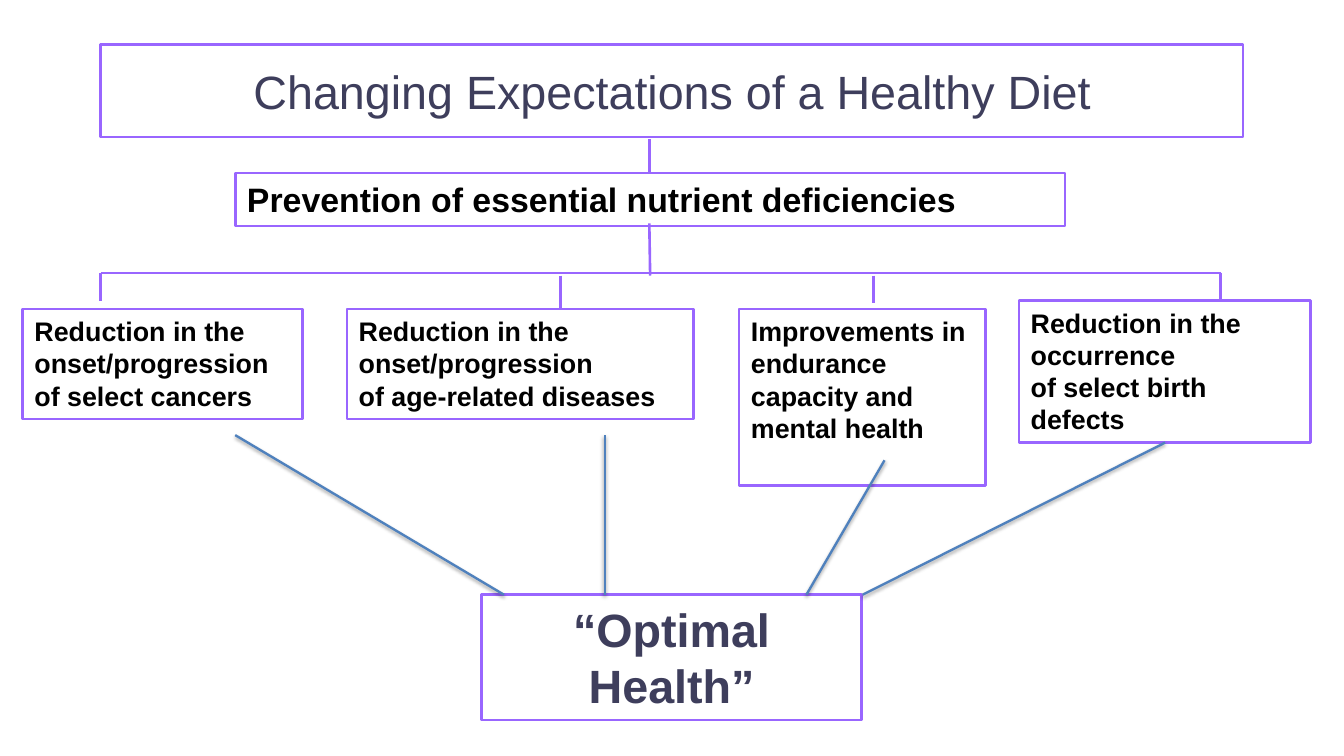
import pptx
import pptx.util
import pptx.dml.color
import pptx.enum.shapes
import pptx.enum.text
import lxml.etree

COLORS = {"frame": "9966FF", "link": "4F81BD", "head": "3E3E5C", "body": "000000"}

# Positions count cells of a 16 x 9 grid: left, top, width, height
HEADS = [
    ("Changing Expectations of a Healthy Diet", (1.2, 0.53, 13.6, 1.1), False),
    ("“Optimal Health”", (5.73, 7.08, 4.53, 1.49), True),
]
CAUSE = ("Prevention of essential nutrient deficiencies", (2.8, 2.06, 9.88, 0.63))
GAINS = [
    ("Reduction in the\nonset/progression\nof select cancers", (0.27, 3.68, 3.33, 1.31)),
    ("Reduction in the\nonset/progression\nof age-related diseases", (4.13, 3.68, 4.13, 1.31)),
    ("Improvements in endurance\ncapacity and mental health", (8.8, 3.68, 2.93, 2.1)),
    ("Reduction in the occurrence\nof select birth defects", (12.13, 3.58, 3.47, 1.69)),
]

BAR, GOAL = 3.25, 7.08  # rows of the branch bar and the top of the goal box
STEM = 7.73
DROPS = [(1.2, BAR, 3.58), (6.67, 3.28, 3.68), (10.4, 3.28, 3.61), (14.53, BAR, 3.58)]
TREE = [
    (STEM, 1.66, STEM, 2.06),
    (STEM, 2.66, 7.74, 3.28),
    (DROPS[0][0], BAR, DROPS[-1][0], BAR),
] + [(x, top, x, end) for x, top, end in DROPS]
PATHS = [(2.8, 5.18, 6), (7.2, 5.18, 7.2), (10.53, 5.48, 9.6), (13.87, 5.27, 10.27)]

MARGINS = {"margin_left": 0.14, "margin_right": 0.14, "margin_top": 0.07, "margin_bottom": 0.07}
ALIGN = pptx.enum.text.PP_ALIGN
ANCHOR = pptx.enum.text.MSO_ANCHOR

deck = pptx.Presentation()
deck.slide_width = pptx.util.Inches(16)
deck.slide_height = pptx.util.Inches(9)
CELL = deck.slide_width / 16
slide = deck.slides.add_slide(deck.slide_layouts[6])


def grid(cells):
    return [round(n * CELL) for n in cells]


def tint(name):
    return pptx.dml.color.RGBColor.from_string(COLORS[name])


def stroke(item, name, width):
    item.line.color.rgb = tint(name)
    item.line.width = pptx.util.Pt(width)


def box(text, cells, size, color="body", bold=True, align=ALIGN.LEFT, anchor=ANCHOR.TOP):
    item = slide.shapes.add_shape(pptx.enum.shapes.MSO_SHAPE.RECTANGLE, *grid(cells))
    item.shadow.inherit = False
    item.fill.background()
    stroke(item, "frame", 2.25)
    frame = item.text_frame
    frame.word_wrap = True
    frame.vertical_anchor = anchor
    for name, inset in MARGINS.items():
        setattr(frame, name, pptx.util.Inches(inset))
    frame.text = text
    style = {"name": "Arial", "size": pptx.util.Pt(size), "bold": bold}
    for para in frame.paragraphs:
        para.alignment = align
        for run in para.runs:
            for name, value in style.items():
                setattr(run.font, name, value)
            run.font.color.rgb = tint(color)


def link(ends, color, width, shade):
    item = slide.shapes.add_connector(pptx.enum.shapes.MSO_CONNECTOR.STRAIGHT, *grid(ends))
    stroke(item, color, width)
    if not shade:
        props = item._element.spPr
        lxml.etree.SubElement(props, pptx.oxml.ns.qn("a:effectLst"))


for text, cells, bold in HEADS:
    box(text, cells, 40, "head", bold, ALIGN.CENTER, ANCHOR.MIDDLE)
box(*CAUSE, 29)
for text, cells in GAINS:
    box(text, cells, 23)
for ends in TREE:
    link(ends, "frame", 2.25, False)
for x, top, end in PATHS:
    link((x, top, end, GOAL), "link", 2, True)

deck.save("out.pptx")
